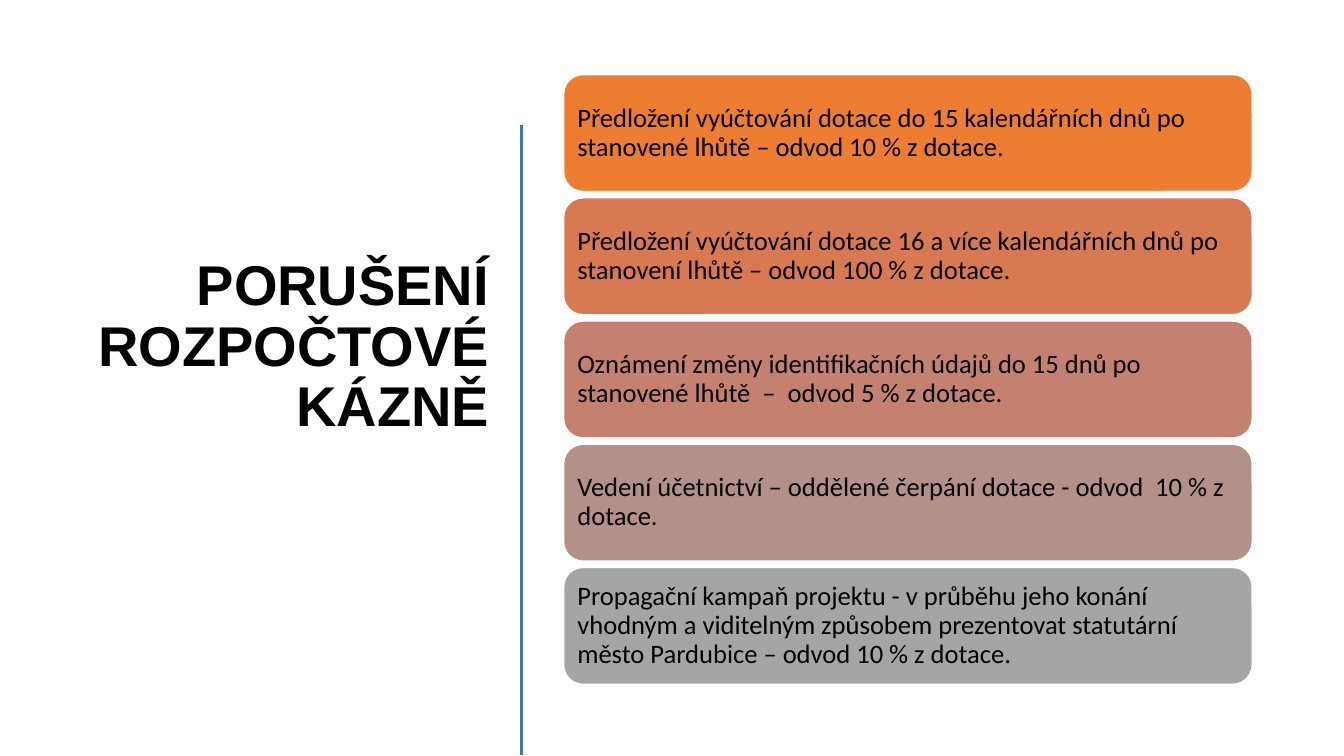
import pptx
import pptx.dml.color
import pptx.enum.shapes
import pptx.enum.text
import pptx.oxml
import pptx.util
from pptx.util import Inches

PENALTIES = [
    ("Předložení vyúčtování dotace do 15 kalendářních dnů po stanovené lhůtě – odvod 10 % z dotace.", "ED7D31"),
    ("Předložení vyúčtování dotace 16 a více kalendářních dnů po stanovení lhůtě – odvod 100 % z dotace.", "D87A51"),
    ("Oznámení změny identifikačních údajů do 15 dnů po stanovené lhůtě  –  odvod 5 % z dotace.", "C48170"),
    ("Vedení účetnictví – oddělené čerpání dotace - odvod  10 % z dotace.", "B4908B"),
    ("Propagační kampaň projektu - v průběhu jeho konání vhodným a viditelným způsobem prezentovat "
     "statutární město Pardubice – odvod 10 % z dotace.", "A5A5A5"),
]


def paint(color_format, hex_color):
    """Set a colour format from a hex string."""
    color_format.rgb = pptx.dml.color.RGBColor.from_string(hex_color)


def write(frame, text, font_name, size, bold, alignment):
    """Fill a text frame with one formatted, vertically centred paragraph."""
    frame.text = text
    frame.word_wrap = True
    frame.auto_size = pptx.enum.text.MSO_AUTO_SIZE.NONE
    frame.vertical_anchor = pptx.enum.text.MSO_ANCHOR.MIDDLE
    paragraph = frame.paragraphs[0]
    paragraph.alignment = alignment
    paragraph.line_spacing = 0.9
    font = paragraph.runs[0].font
    font.name, font.size, font.bold = font_name, pptx.util.Pt(size), bold
    paint(font.color, "000000")


def add_heading(slide, left, top, width, height):
    """Place the right-aligned title, raised slightly above the box centre."""
    heading = slide.shapes.title
    heading.left, heading.top = Inches(left), Inches(top)
    heading.width, heading.height = Inches(width), Inches(height)
    write(heading.text_frame, "PORUŠENÍ ROZPOČTOVÉ KÁZNĚ", "Arial", 40, True,
          pptx.enum.text.PP_ALIGN.RIGHT)
    heading.text_frame.margin_bottom = Inches(0.65)


def add_divider(slide, left, top, height):
    """Draw the vertical rule between the title and the penalties."""
    divider = slide.shapes.add_connector(
        pptx.enum.shapes.MSO_CONNECTOR.STRAIGHT,
        Inches(left), Inches(top), Inches(left), Inches(top + height))
    paint(divider.line.color, "4472C4")
    divider.line.width = pptx.util.Pt(2)
    properties = divider.element.spPr
    properties.append(properties.makeelement(pptx.oxml.ns.qn("a:effectLst"), {}))


def add_penalties(slide, left, top, width, height, card_height=1.16):
    """Stack the penalty cards evenly inside the box."""
    pitch = (height - card_height) / (len(PENALTIES) - 1)
    for index, (penalty, fill) in enumerate(PENALTIES):
        card = slide.shapes.add_shape(
            pptx.enum.shapes.MSO_SHAPE.ROUNDED_RECTANGLE,
            Inches(left), Inches(top + index * pitch), Inches(width), Inches(card_height))
        card.shadow.inherit = False
        card.fill.solid()
        paint(card.fill.fore_color, fill)
        paint(card.line.color, "FFFFFF")
        card.line.width = pptx.util.Pt(1)
        frame = card.text_frame
        write(frame, penalty, "Calibri", 19, False, pptx.enum.text.PP_ALIGN.LEFT)
        frame.margin_left = frame.margin_right = Inches(0.08)
        frame.margin_top = frame.margin_bottom = Inches(0.08)


def main():
    """Build and save the slide."""
    deck = pptx.Presentation()
    deck.slide_width, deck.slide_height = Inches(13.33), Inches(7.5)
    slide = deck.slides.add_slide(deck.slide_layouts[0])
    subtitle = slide.placeholders[1].element
    subtitle.getparent().remove(subtitle)
    add_heading(slide, 0.64, 0.7, 4.31, 6.11)
    add_divider(slide, 5.17, 1.24, 6.25)
    add_penalties(slide, 5.59, 0.74, 6.83, 6.05)
    deck.save("out.pptx")


if __name__ == "__main__":
    main()
